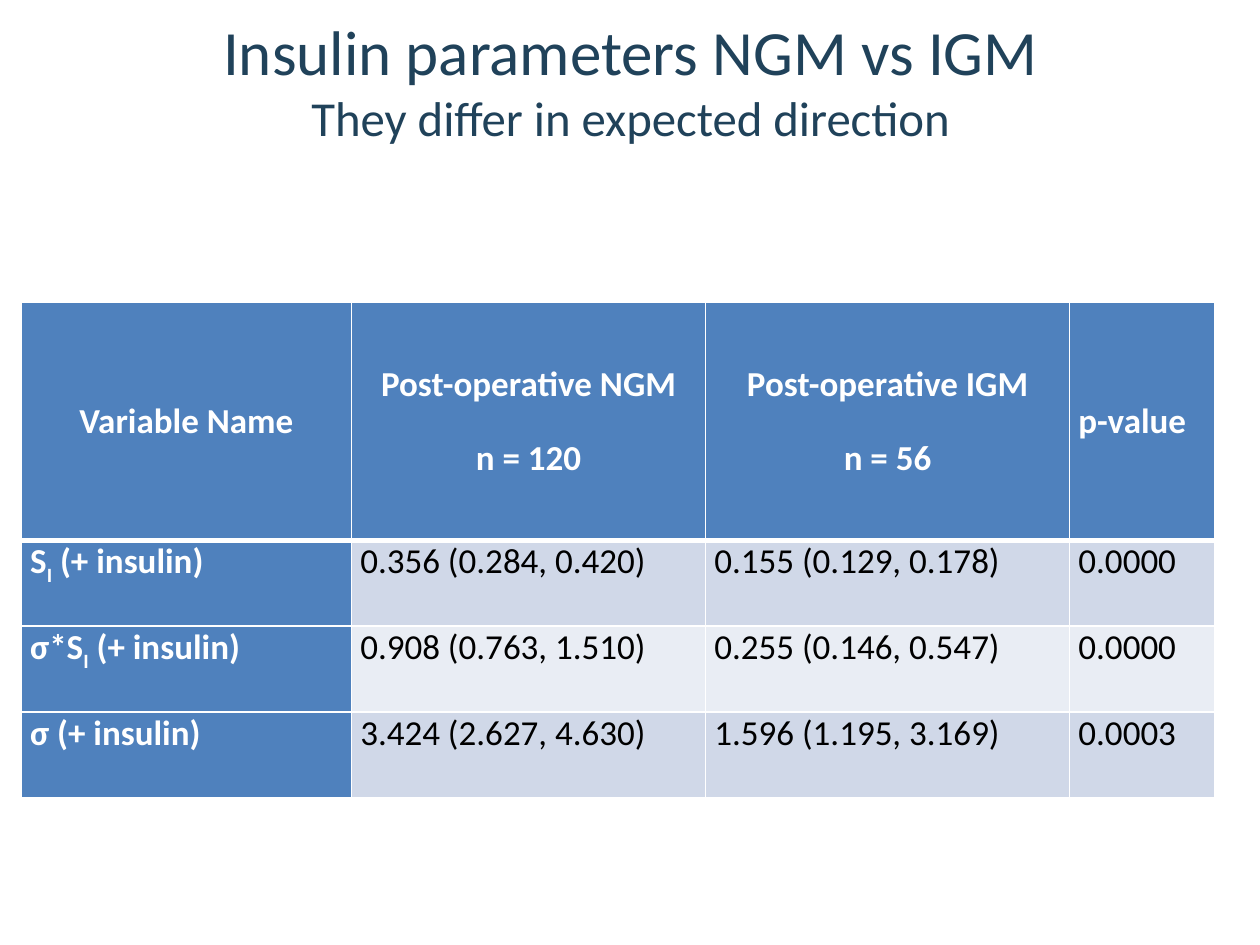
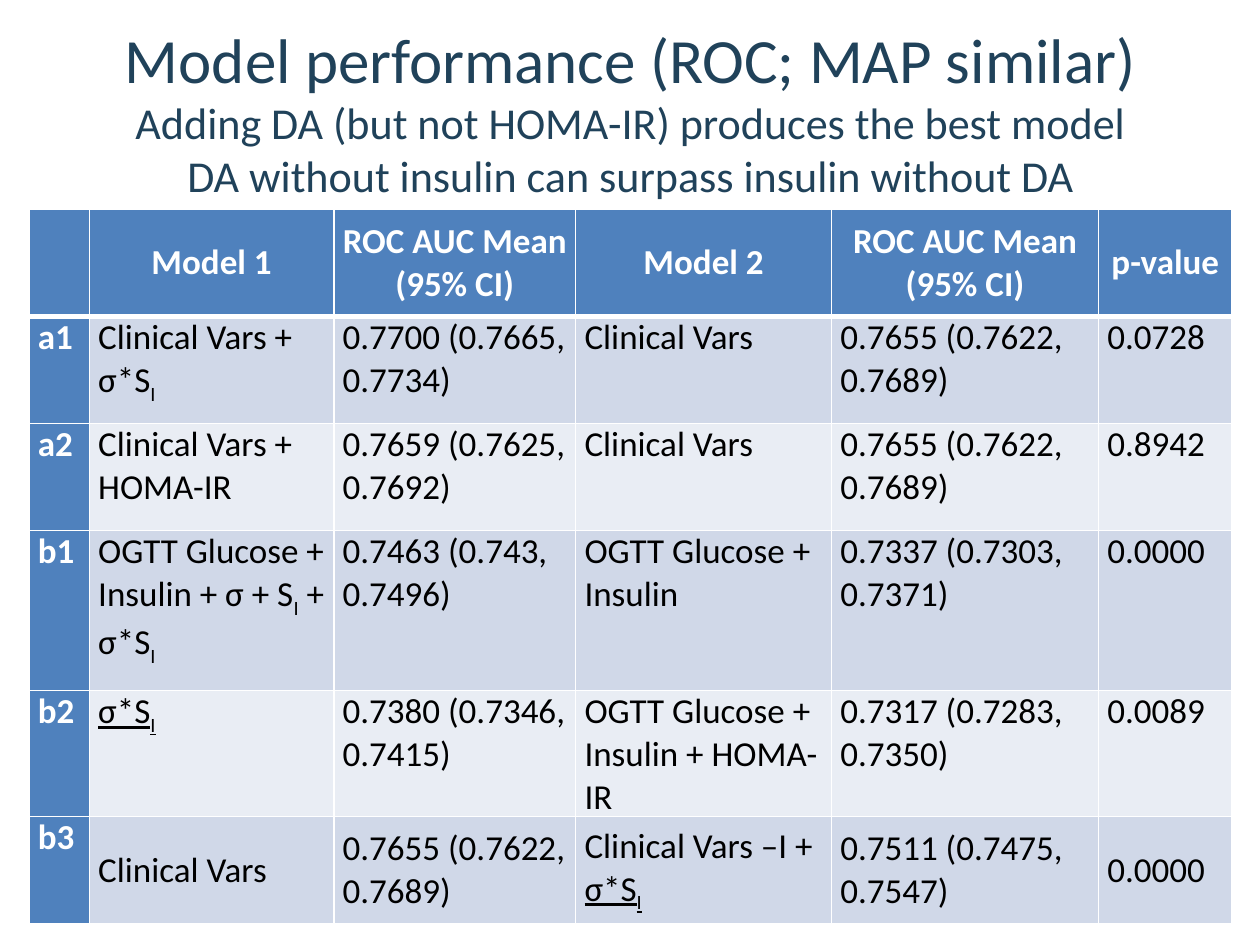
from lxml import etree
from pptx import Presentation
from pptx import util as u
from pptx.dml import color
from pptx.enum import text as t
from pptx.oxml import ns

PX = 9144
FONT = "Calibri"
NAVY, BLUE, WHITE, BLACK = "20425A", "4F81BD", "FFFFFF", "000000"
BANDS = ["D0D8E8", "E9EDF4"]
LEFT, CENTER = t.PP_ALIGN.LEFT, t.PP_ALIGN.CENTER
TOP, MIDDLE = t.MSO_ANCHOR.TOP, t.MSO_ANCHOR.MIDDLE


def px(length):
    return u.Emu(length * PX)


def rgb(code):
    return color.RGBColor.from_string(code)


def write(paragraph, text, size=20, ink=BLACK, bold=False, align=LEFT):
    """Add text in which _..._ is underlined, ~...~ is lowered and a newline breaks the line."""
    paragraph.alignment = align
    for row, line in enumerate(text.split("\n")):
        if row:
            paragraph.add_line_break()
        for underlined, part in enumerate(line.split("_")):
            for lowered, piece in enumerate(part.split("~")):
                if not piece:
                    continue
                run = paragraph.add_run()
                run.text = piece
                font = run.font
                font.name, font.size, font.bold = FONT, u.Pt(size), bold
                font.color.rgb = rgb(ink)
                if underlined % 2:
                    font.underline = True
                if lowered % 2:
                    run._r.get_or_add_rPr().set("baseline", "-25000")


class Deck:
    def __init__(self):
        self.show = Presentation()
        self.show.slide_width, self.show.slide_height = px(1000), px(750)
        self.slide = None

    def new_slide(self):
        self.slide = self.show.slides.add_slide(self.show.slide_layouts[6])

    def title(self, heading, subtitle, height, subtitle_size):
        box = self.slide.shapes.add_textbox(px(88), px(17), px(825), px(height))
        frame = box.text_frame
        frame.word_wrap = True
        frame.vertical_anchor = MIDDLE
        paragraph = frame.paragraphs[0]
        write(paragraph, heading, size=36, ink=NAVY, align=CENTER)
        write(paragraph, "\n" + subtitle, size=subtitle_size, ink=NAVY, align=CENTER)

    def borders(self, cell, row):
        properties = cell._tc.get_or_add_tcPr()
        widths = {"L": 1, "R": 1, "T": 3 if row == 1 else 1, "B": 3 if row == 0 else 1}
        for side, width in widths.items():
            line = etree.SubElement(properties, ns.qn(f"a:ln{side}"), w=str(u.Pt(width)))
            fill = etree.SubElement(line, ns.qn("a:solidFill"))
            etree.SubElement(fill, ns.qn("a:srgbClr"), val=WHITE)

    def cell(self, cell, text, row, label, align, anchor):
        self.borders(cell, row)
        cell.fill.solid()
        cell.fill.fore_color.rgb = rgb(BLUE if label else BANDS[(row - 1) % 2])
        cell.margin_left = cell.margin_right = px(7)
        cell.margin_top = cell.margin_bottom = 0
        cell.vertical_anchor = anchor
        frame = cell.text_frame
        for number, line in enumerate(text.split("\n")):
            paragraph = frame.add_paragraph() if number else frame.paragraphs[0]
            paragraph.space_before, paragraph.space_after = u.Pt(6), u.Pt(12)
            write(paragraph, line, ink=WHITE if label else BLACK, bold=label, align=align)

    def table(self, left, top, widths, heights, rows, left_headers=(), middle_rows=()):
        grid = self.slide.shapes.add_table(
            len(rows), len(widths), px(left), px(top), px(sum(widths)), px(sum(heights))
        ).table
        grid.horz_banding = False
        for column, width in zip(grid.columns, widths):
            column.width = px(width)
        for line, height in zip(grid.rows, heights):
            line.height = px(height)
        for r, values in enumerate(rows):
            for c, value in enumerate(values):
                header = r == 0
                align = CENTER if header and value not in left_headers else LEFT
                middle = header or (c > 0 and values[0] in middle_rows)
                self.cell(grid.cell(r, c), value, r, header or c == 0, align,
                          MIDDLE if middle else TOP)


def insulin_parameters(deck):
    deck.new_slide()
    deck.title("Insulin parameters NGM vs IGM", "They differ in expected direction", 92, 27.9)
    parameters = [
        ["Variable Name", "Post-operative NGM\nn = 120", "Post-operative IGM\nn = 56", "p-value"],
        ["S~I~ (+ insulin)", "0.356 (0.284, 0.420)", "0.155 (0.129, 0.178)", "0.0000"],
        ["σ*S~I~ (+ insulin)", "0.908 (0.763, 1.510)", "0.255 (0.146, 0.547)", "0.0000"],
        ["σ (+ insulin)", "3.424 (2.627, 4.630)", "1.596 (1.195, 3.169)", "0.0003"],
    ]
    deck.table(17, 240, [262, 281, 289, 115], [189, 68, 68, 68], parameters,
               left_headers=["p-value"])


def model_performance(deck):
    deck.new_slide()
    deck.title(
        "Model performance (ROC; MAP similar)",
        "Adding DA (but not HOMA-IR) produces the best model\n"
        "DA without insulin can surpass insulin without DA",
        142, 25.2,
    )
    clinical, clinical_auc = "Clinical Vars", "0.7655 (0.7622, 0.7689)"
    glucose = "OGTT Glucose + Insulin"
    auc = "ROC AUC Mean (95% CI)"
    comparisons = [
        ["", "Model 1", auc, "Model 2", auc, "p-value"],
        ["a1", clinical + " + σ*S~I~", "0.7700 (0.7665, 0.7734)",
         clinical, clinical_auc, "0.0728"],
        ["a2", clinical + " + HOMA-IR", "0.7659 (0.7625, 0.7692)",
         clinical, clinical_auc, "0.8942"],
        ["b1", glucose + " + σ + S~I~ + σ*S~I~", "0.7463 (0.743, 0.7496)",
         glucose, "0.7337 (0.7303, 0.7371)", "0.0000"],
        ["b2", "_σ*S~I~_", "0.7380 (0.7346, 0.7415)",
         glucose + " + HOMA-IR", "0.7317 (0.7283, 0.7350)", "0.0089"],
        ["b3", clinical, clinical_auc,
         clinical + " –I + _σ*S~I~_", "0.7511 (0.7475, 0.7547)", "0.0000"],
    ]
    deck.table(23, 166, [48, 194, 192, 203, 212, 106], [85, 85, 85, 127, 98, 85],
               comparisons, middle_rows=["b3"])


def main():
    deck = Deck()
    insulin_parameters(deck)
    model_performance(deck)
    deck.show.save("out.pptx")


if __name__ == "__main__":
    main()
